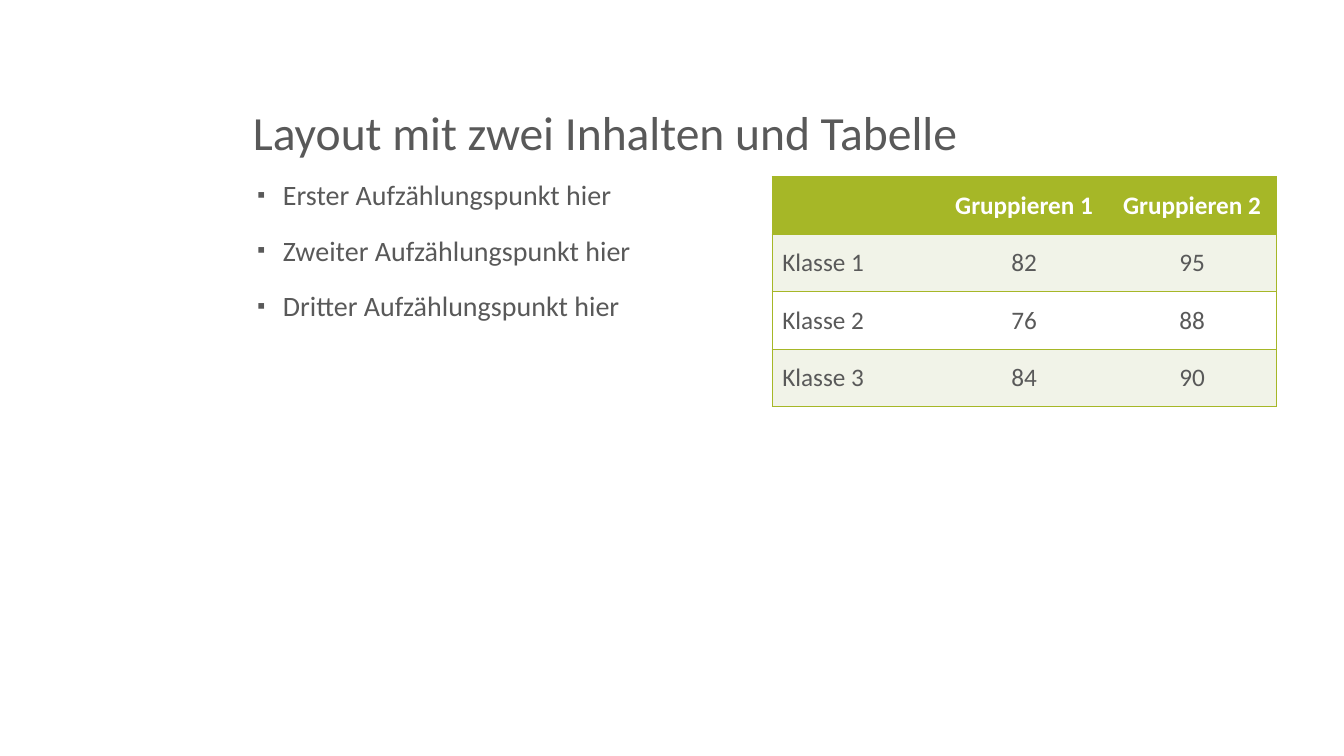
from dataclasses import dataclass

import pptx
import pptx.dml.color
import pptx.enum.text
import pptx.oxml
import pptx.oxml.ns
import pptx.presentation
import pptx.slide
import pptx.table
import pptx.text.text
import pptx.util
from lxml import etree

Cm = pptx.util.Cm
Pt = pptx.util.Pt
RGBColor = pptx.dml.color.RGBColor
PP_ALIGN = pptx.enum.text.PP_ALIGN
MSO_ANCHOR = pptx.enum.text.MSO_ANCHOR
qn = pptx.oxml.ns.qn

GREY = RGBColor(0x59, 0x59, 0x59)
GREEN = RGBColor(0xA6, 0xB7, 0x27)
PALE_GREEN = RGBColor(0xF1, 0xF3, 0xE8)
WHITE = RGBColor(0xFF, 0xFF, 0xFF)
FONT_NAME = "Calibri"

CONTENT_LEFT = Cm(6.12)
CONTENT_TOP = Cm(4.45)
CONTENT_WIDTH = Cm(12.7)
TABLE_LEFT = Cm(19.46)
ROW_HEIGHT = Cm(1.45)


@dataclass(frozen=True)
class TableRow:
    values: tuple[str, str, str]
    fill: RGBColor
    color: RGBColor = GREY
    bold: bool = False


BULLETS = (
    "Erster Aufzählungspunkt hier",
    "Zweiter Aufzählungspunkt hier",
    "Dritter Aufzählungspunkt hier",
)
TABLE_ROWS = (
    TableRow(("", "Gruppieren 1", "Gruppieren 2"), GREEN, WHITE, True),
    TableRow(("Klasse 1", "82", "95"), PALE_GREEN),
    TableRow(("Klasse 2", "76", "88"), WHITE),
    TableRow(("Klasse 3", "84", "90"), PALE_GREEN),
)


def add_run(
    paragraph: pptx.text.text._Paragraph,
    text: str,
    size: float,
    color: RGBColor = GREY,
    bold: bool = False,
) -> None:
    run = paragraph.add_run()
    run.text = text
    run.font.name = FONT_NAME
    run.font.size = Pt(size)
    run.font.bold = bold
    run.font.color.rgb = color


def add_title(slide: pptx.slide.Slide) -> None:
    title = slide.shapes.title
    title.left, title.top = CONTENT_LEFT, Cm(0.84)
    title.width, title.height = Cm(26.04), Cm(3.33)
    frame = title.text_frame
    frame.word_wrap = True
    frame.auto_size = pptx.enum.text.MSO_AUTO_SIZE.NONE
    frame.vertical_anchor = MSO_ANCHOR.BOTTOM
    paragraph = frame.paragraphs[0]
    paragraph.alignment = PP_ALIGN.LEFT
    paragraph.line_spacing = 0.9
    add_run(paragraph, "Layout mit zwei Inhalten und Tabelle", 34)


def set_bullet(paragraph: pptx.text.text._Paragraph) -> None:
    properties = paragraph._p.get_or_add_pPr()
    properties.set("marL", str(Cm(0.76)))
    properties.set("indent", str(Cm(-0.64)))
    color = etree.SubElement(properties, qn("a:buClr"))
    etree.SubElement(color, qn("a:srgbClr"), val=str(GREY))
    etree.SubElement(properties, qn("a:buSzPct"), val="80000")
    etree.SubElement(properties, qn("a:buFont"), typeface=FONT_NAME)
    etree.SubElement(properties, qn("a:buChar"), char="▪")


def add_bullets(slide: pptx.slide.Slide) -> None:
    box = slide.shapes.add_textbox(
        CONTENT_LEFT, CONTENT_TOP, CONTENT_WIDTH, Cm(11.43)
    )
    frame = box.text_frame
    frame.word_wrap = True
    for index, text in enumerate(BULLETS):
        paragraph = frame.add_paragraph() if index else frame.paragraphs[0]
        set_bullet(paragraph)
        paragraph.line_spacing = 0.9
        paragraph.space_before = Pt(18 if index else 0)
        add_run(paragraph, text, 20)


def set_borders(cell: pptx.table._Cell, visible_sides: str) -> None:
    properties = cell._tc.get_or_add_tcPr()
    for side in "LRTB":
        line = etree.SubElement(properties, qn(f"a:ln{side}"), w=str(Pt(1)))
        if side in visible_sides:
            fill = etree.SubElement(line, qn("a:solidFill"))
            etree.SubElement(fill, qn("a:srgbClr"), val=str(GREEN))
        else:
            etree.SubElement(line, qn("a:noFill"))


def add_class_table(slide: pptx.slide.Slide) -> None:
    column_count = len(TABLE_ROWS[0].values)
    table = slide.shapes.add_table(
        len(TABLE_ROWS),
        column_count,
        TABLE_LEFT,
        CONTENT_TOP,
        CONTENT_WIDTH,
        ROW_HEIGHT * len(TABLE_ROWS),
    ).table
    for row_index, row in enumerate(TABLE_ROWS):
        for column_index, text in enumerate(row.values):
            cell = table.cell(row_index, column_index)
            sides = "TB"
            if column_index == 0:
                sides += "L"
            if column_index == column_count - 1:
                sides += "R"
            set_borders(cell, sides)
            cell.fill.solid()
            cell.fill.fore_color.rgb = row.fill
            cell.vertical_anchor = MSO_ANCHOR.MIDDLE
            paragraph = cell.text_frame.paragraphs[0]
            paragraph.alignment = PP_ALIGN.CENTER if column_index else PP_ALIGN.LEFT
            if text:
                add_run(paragraph, text, 18, row.color, row.bold)


def main() -> None:
    presentation = pptx.Presentation()
    presentation.slide_width = Cm(33.87)
    presentation.slide_height = Cm(19.05)
    slide = presentation.slides.add_slide(presentation.slide_layouts[5])
    slide.background.fill.solid()
    slide.background.fill.fore_color.rgb = WHITE
    add_title(slide)
    add_bullets(slide)
    add_class_table(slide)
    presentation.save("out.pptx")


if __name__ == "__main__":
    main()
